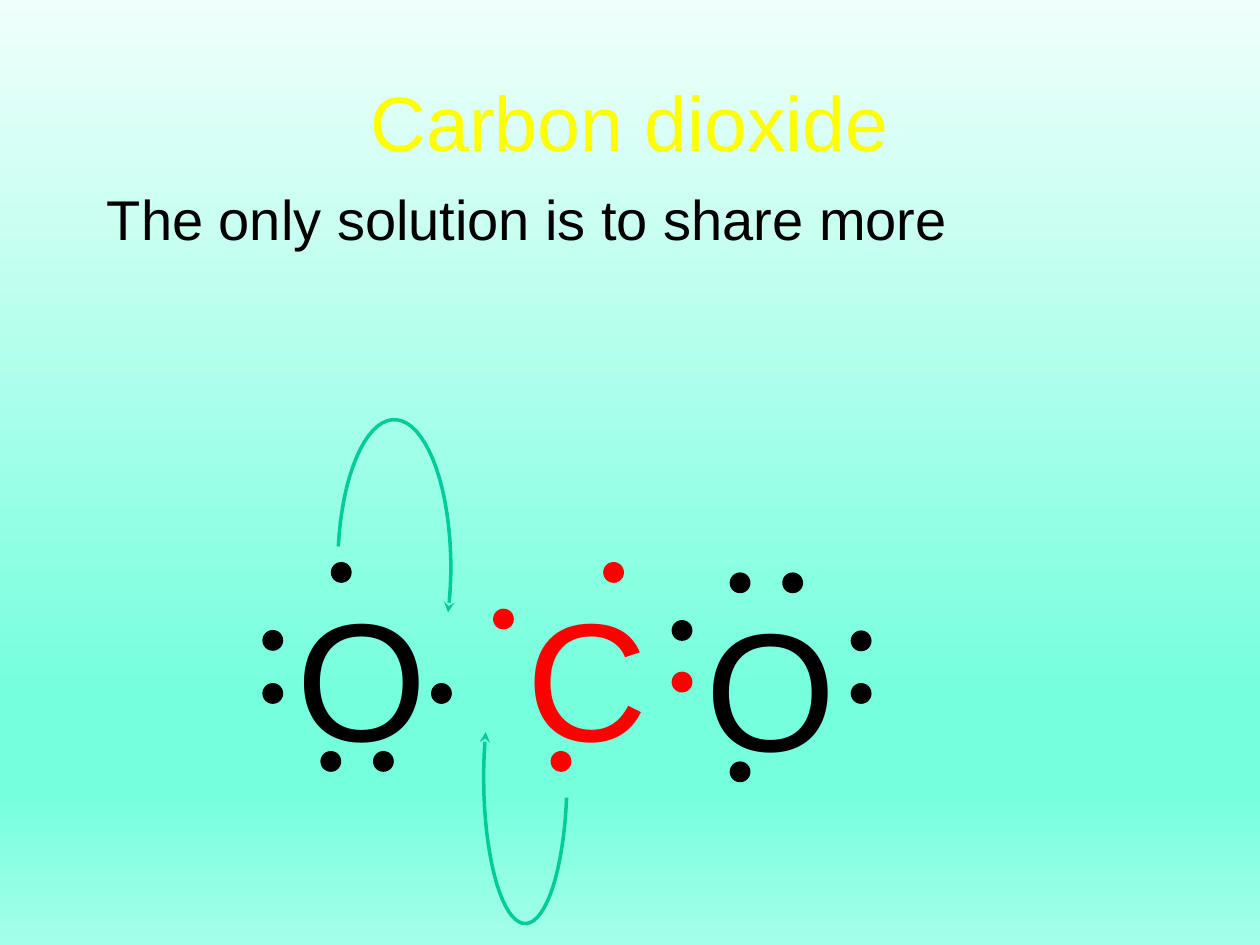
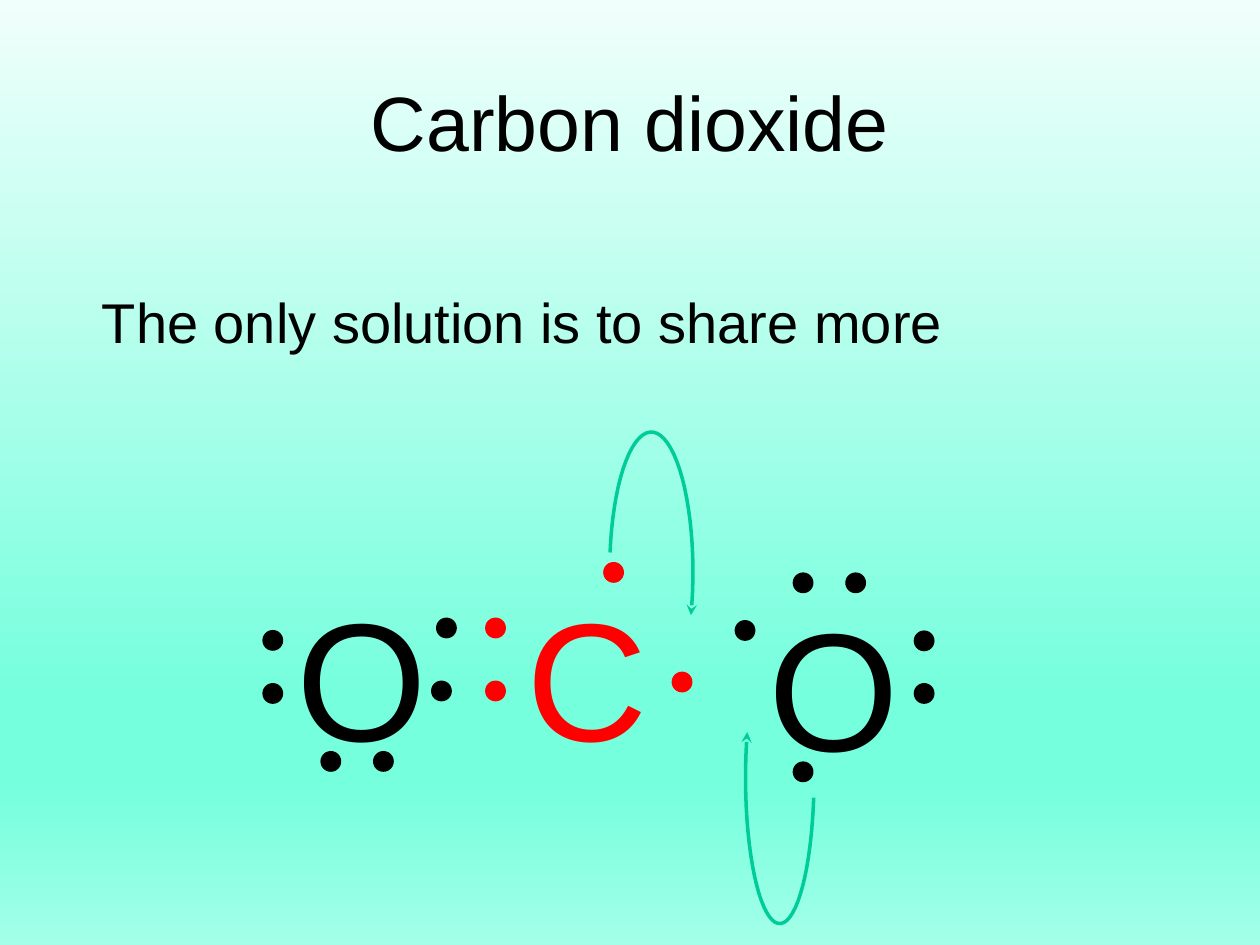
import math
from dataclasses import dataclass
from typing import NamedTuple

import pptx
import pptx.dml.color
import pptx.enum.shapes
import pptx.enum.text
import pptx.oxml.ns
import pptx.util

Cm = pptx.util.Cm
Pt = pptx.util.Pt
qn = pptx.oxml.ns.qn


@dataclass(frozen=True)
class Theme:
    font: str = "Arial"
    black: str = "000000"
    red: str = "FF0000"
    yellow: str = "FFFF00"
    arrow: str = "00CC99"
    backdrop: tuple = ((0, "F0FFFB"), (74, "75FFDD"), (83, "75FFDD"), (100, "A3FFE8"))
    title_size: int = 44
    body_size: int = 32
    symbol_size: int = 96
    arrow_width: int = 2


THEME = Theme()
ELECTRON = 0.42
SYMBOL_WIDTH, SYMBOL_HEIGHT = 2.34, 4.32


# All lengths below are centimetres.
class Box(NamedTuple):
    left: float
    top: float
    width: float
    height: float


class Atom(NamedTuple):
    symbol: str
    color: str
    left: float
    top: float
    electrons: tuple  # offsets from the symbol's corner


class Transfer(NamedTuple):
    """An arrow following part of an ellipse, over or under its centre."""
    center_x: float
    center_y: float
    radius_x: float
    radius_y: float
    over: bool


class Step(NamedTuple):
    title_color: str
    body: Box
    atoms: tuple
    transfers: tuple


TITLE_BOX = Box(1.9, 1.37, 21.6, 2.12)
TITLE = "Carbon dioxide"
MESSAGE = "The only solution is to share more"

# Electrons that keep their place in both steps
TOP_RIGHT = (1.8, -0.1)
BOTTOM_LEFT, BOTTOM_RIGHT = (0.74, 3.71), (1.8, 3.71)
LEFT_PAIR = ((-0.43, 1.27), (-0.43, 2.34))
RIGHT_OXYGEN = ((3.18, 1.07), (3.18, 2.13), TOP_RIGHT, (0.74, -0.1),
                (-0.43, 0.86), BOTTOM_LEFT)
LEFT_OXYGEN = (*LEFT_PAIR, BOTTOM_RIGHT, BOTTOM_LEFT)
CARBON = ((3.18, 2.11), TOP_RIGHT)


def right_oxygen(left: float) -> Atom:
    return Atom("O", THEME.black, left, 11.64, RIGHT_OXYGEN)


def carbon(*electrons: tuple) -> Atom:
    return Atom("C", THEME.red, 10.36, 11.43, CARBON + electrons)


def left_oxygen(*electrons: tuple) -> Atom:
    return Atom("O", THEME.black, 5.72, 11.43, LEFT_OXYGEN + electrons)


STEPS = (
    Step(THEME.yellow, Box(1.9, 3.6, 21.6, 5.5),
         (right_oxygen(13.97),
          carbon((-0.42, 0.84), BOTTOM_LEFT),
          left_oxygen((2.97, 2.34), (0.95, -0.1))),
         (Transfer(7.95, 11.43, 1.14, 2.97, True),
          Transfer(10.59, 15.67, 0.84, 2.95, False))),
    Step(THEME.black, Box(1.8, 5.66, 21.6, 5.5),
         (right_oxygen(15.24),
          carbon((-0.58, 1.02), (-0.58, 2.29)),
          left_oxygen((2.97, 2.29), (3.07, 1.02))),
         (Transfer(13.13, 11.53, 0.84, 2.82, True),
          Transfer(15.72, 15.67, 0.69, 2.95, False))),
)


def rgb(color: str) -> pptx.dml.color.RGBColor:
    return pptx.dml.color.RGBColor.from_string(color)


def paint_backdrop(master) -> None:
    fill = master.background.fill
    fill.gradient()
    fill.gradient_angle = 270
    stops = master.element.find(".//" + qn("a:gsLst"))
    for stop in list(stops):
        stops.remove(stop)
    for percent, color in THEME.backdrop:
        stop = stops.makeelement(qn("a:gs"), {"pos": str(percent * 1000)})
        stop.append(stop.makeelement(qn("a:srgbClr"), {"val": color}))
        stops.append(stop)


def write(frame, words: str, size: int, color: str, before: float = 0,
          align=pptx.enum.text.PP_ALIGN.LEFT,
          anchor=pptx.enum.text.MSO_ANCHOR.TOP) -> None:
    frame.word_wrap = True
    frame.auto_size = pptx.enum.text.MSO_AUTO_SIZE.NONE
    frame.vertical_anchor = anchor
    line = frame.paragraphs[0]
    line.alignment = align
    line.space_before = Pt(before)
    run = line.add_run()
    run.text = words
    run.font.name = THEME.font
    run.font.size = Pt(size)
    run.font.color.rgb = rgb(color)


def place(placeholder, box: Box) -> None:
    placeholder.left, placeholder.top = Cm(box.left), Cm(box.top)
    placeholder.width, placeholder.height = Cm(box.width), Cm(box.height)


def add_heading(slide, step: Step) -> None:
    heading = slide.shapes.title
    place(heading, TITLE_BOX)
    write(heading.text_frame, TITLE, THEME.title_size, step.title_color,
          align=pptx.enum.text.PP_ALIGN.CENTER,
          anchor=pptx.enum.text.MSO_ANCHOR.MIDDLE)
    message = slide.placeholders[1]
    place(message, step.body)
    write(message.text_frame, MESSAGE, THEME.body_size, THEME.black, before=3.6)
    # Plain line: no bullet, no hanging indent
    layout = message.text_frame.paragraphs[0]._p.get_or_add_pPr()
    layout.set("marL", "0")
    layout.set("indent", "0")
    layout.append(layout.makeelement(qn("a:buNone"), {}))


def add_atom(slide, atom: Atom) -> None:
    parts = slide.shapes.add_group_shape().shapes
    symbol = parts.add_textbox(Cm(atom.left), Cm(atom.top),
                               Cm(SYMBOL_WIDTH), Cm(SYMBOL_HEIGHT))
    write(symbol.text_frame, atom.symbol, THEME.symbol_size, atom.color, before=9)
    for across, down in atom.electrons:
        electron = parts.add_shape(
            pptx.enum.shapes.MSO_SHAPE.OVAL, Cm(atom.left + across),
            Cm(atom.top + down), Cm(ELECTRON), Cm(ELECTRON))
        electron.shadow.inherit = False
        electron.fill.solid()
        electron.fill.fore_color.rgb = rgb(atom.color)
        electron.line.fill.background()


def add_transfer(slide, transfer: Transfer) -> None:
    first = 188 if transfer.over else 8
    points = [
        (Cm(transfer.center_x + transfer.radius_x * math.cos(math.radians(angle))),
         Cm(transfer.center_y + transfer.radius_y * math.sin(math.radians(angle))))
        for angle in range(first, first + 191, 5)
    ]
    outline = slide.shapes.build_freeform(*points[0])
    outline.add_line_segments(points[1:], close=False)
    arrow = outline.convert_to_shape()
    arrow.shadow.inherit = False
    arrow.fill.background()
    arrow.line.color.rgb = rgb(THEME.arrow)
    arrow.line.width = Pt(THEME.arrow_width)
    stroke = arrow.line._get_or_add_ln()
    stroke.append(stroke.makeelement(qn("a:tailEnd"), {"type": "stealth"}))


def main() -> None:
    deck = pptx.Presentation()
    deck.slide_width, deck.slide_height = Cm(25.4), Cm(19.05)
    paint_backdrop(deck.slide_master)
    for step in STEPS:
        slide = deck.slides.add_slide(deck.slide_layouts[1])
        add_heading(slide, step)
        for atom in step.atoms:
            add_atom(slide, atom)
        for transfer in step.transfers:
            add_transfer(slide, transfer)
    deck.save("out.pptx")


if __name__ == "__main__":
    main()
